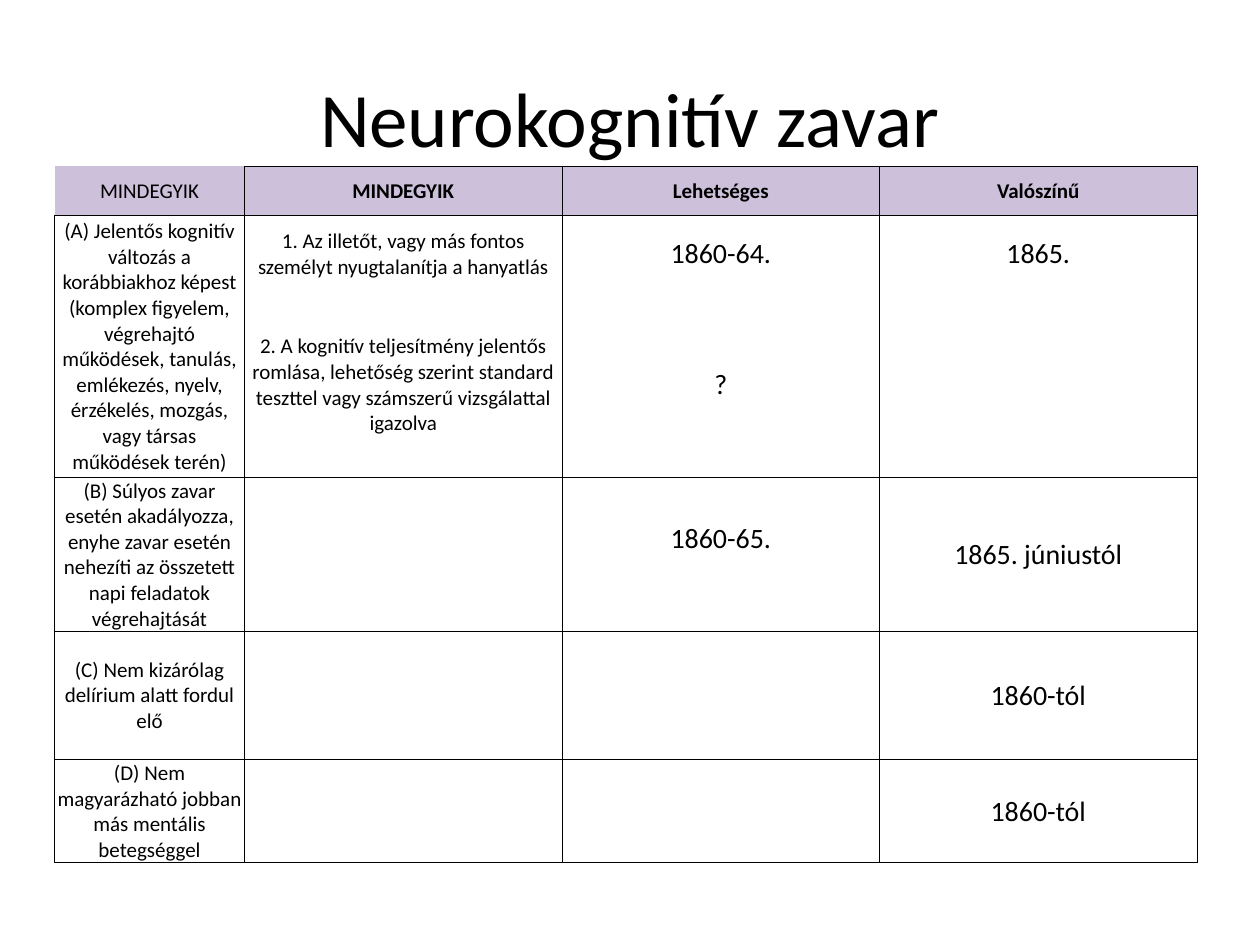
from pptx import Presentation
from pptx import util as u
from pptx.dml.color import RGBColor
from pptx.enum import text
from pptx.oxml import parse_xml
from pptx.oxml.ns import nsdecls

BLACK = RGBColor(0x00, 0x00, 0x00)
LILAC = RGBColor(0xCC, 0xC0, 0xDA)
FONT = "Calibri"
LABEL_SIZE, DATE_SIZE = 12, 16
INSET = u.Cm(0.02)

COLUMN_WIDTHS = [3.83, 6.4, 6.4, 6.4]
ROW_HEIGHTS = [0.99, 1.55, 3.73, 3.1, 2.59, 2.08]
ROWS = [
    ["MINDEGYIK", "MINDEGYIK", "Lehetséges", "Valószínű"],
    ["(A) Jelentős kognitív változás a korábbiakhoz képest (komplex figyelem, "
     "végrehajtó működések, tanulás, emlékezés, nyelv, érzékelés, mozgás, "
     "vagy társas működések terén)",
     "1. Az illetőt, vagy más fontos személyt nyugtalanítja a hanyatlás",
     "1860-64.", "1865."],
    ["",
     "2. A kognitív teljesítmény jelentős romlása, lehetőség szerint standard "
     "teszttel vagy számszerű vizsgálattal igazolva",
     "?", ""],
    ["(B) Súlyos zavar esetén akadályozza, enyhe zavar esetén nehezíti az "
     "összetett napi feladatok végrehajtását", "", "1860-65.", "1865. júniustól"],
    ["(C) Nem kizárólag delírium alatt fordul elő", "", "", "1860-tól"],
    ["(D) Nem magyarázható jobban más mentális betegséggel", "", "", "1860-tól"],
]


def write_centred(text_frame, wording, size, bold=False):
    text_frame.text = wording
    paragraph = text_frame.paragraphs[0]
    paragraph.alignment = text.PP_ALIGN.CENTER
    for run in paragraph.runs:
        run.font.name = FONT
        run.font.size = u.Pt(size)
        run.font.bold = bold
        run.font.color.rgb = BLACK


def set_borders(cell, hidden_sides):
    """Draw a thin black line on each side (L, R, T, B) that is not hidden."""
    properties = cell._tc.get_or_add_tcPr()
    for position, side in enumerate("LRTB"):
        fill = ("<a:noFill/>" if side in hidden_sides else
                f'<a:solidFill><a:srgbClr val="{BLACK}"/></a:solidFill>')
        properties.insert(position, parse_xml(
            f'<a:ln{side} {nsdecls("a")} w="{u.Pt(0.5)}">{fill}</a:ln{side}>'))


def hidden_sides(row, column):
    if (row, column) == (0, 0):
        return "LT"
    if column > 0:
        return {1: "B", 2: "T"}.get(row, "")
    return ""


def add_title(slide, left, top, width, height):
    title = slide.shapes.add_textbox(left, top, width, height)
    title.text_frame.word_wrap = True
    title.text_frame.vertical_anchor = text.MSO_ANCHOR.MIDDLE
    write_centred(title.text_frame, "Neurokognitív zavar", 44)


def add_criteria_table(slide, left, top):
    table = slide.shapes.add_table(
        len(ROWS), len(COLUMN_WIDTHS), left, top,
        u.Cm(sum(COLUMN_WIDTHS)), u.Cm(sum(ROW_HEIGHTS))).table
    table.first_row = table.horz_banding = False
    for column, width in zip(table.columns, COLUMN_WIDTHS):
        column.width = u.Cm(width)
    for row, height in zip(table.rows, ROW_HEIGHTS):
        row.height = u.Cm(height)

    for r, wordings in enumerate(ROWS):
        for c, wording in enumerate(wordings):
            cell = table.cell(r, c)
            cell.vertical_anchor = text.MSO_ANCHOR.MIDDLE
            cell.margin_left = cell.margin_right = cell.margin_top = INSET
            cell.margin_bottom = 0
            size = DATE_SIZE if r > 0 and c > 1 else LABEL_SIZE
            write_centred(cell.text_frame, wording, size, bold=r == 0 and c > 0)
            if r == 0:
                cell.fill.solid()
                cell.fill.fore_color.rgb = LILAC
            else:
                cell.fill.background()
            set_borders(cell, hidden_sides(r, c))

    table.cell(1, 0).merge(table.cell(2, 0))
    table.cell(3, 2).margin_bottom = u.Cm(0.65)


def main():
    presentation = Presentation()
    presentation.slide_width = u.Cm(25.4)
    presentation.slide_height = u.Cm(19.05)
    slide = presentation.slides.add_slide(presentation.slide_layouts[6])
    add_title(slide, u.Cm(1.27), u.Cm(0.76), u.Cm(22.86), u.Cm(3.18))
    add_criteria_table(slide, u.Cm(1.1), u.Cm(3.35))
    presentation.save("out.pptx")


if __name__ == "__main__":
    main()
